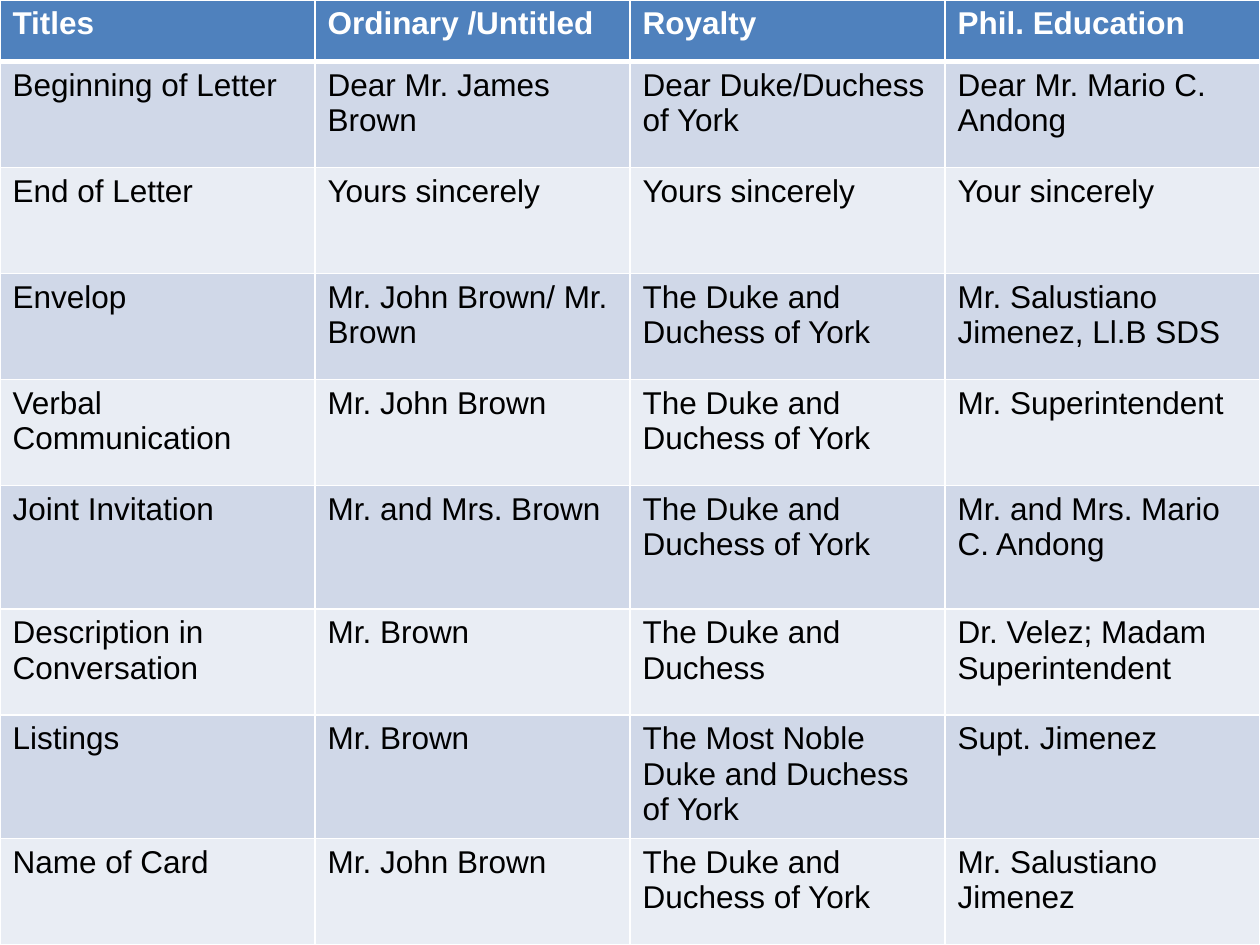
import pptx
import pptx.dml.color
import pptx.oxml
import pptx.oxml.ns
import pptx.util

Pt = pptx.util.Pt
RGBColor = pptx.dml.color.RGBColor

WHITE = RGBColor(0xFF, 0xFF, 0xFF)
BLACK = RGBColor(0x00, 0x00, 0x00)
HEADER = RGBColor(0x4F, 0x81, 0xBD)
BANDS = [RGBColor(0xE9, 0xED, 0xF4), RGBColor(0xD0, 0xD8, 0xE8)]

ROWS = [
    ("Titles", "Ordinary /Untitled", "Royalty", "Phil. Education"),
    ("Beginning of Letter", "Dear Mr. James Brown", "Dear Duke/Duchess of York", "Dear Mr. Mario C. Andong"),
    ("End of Letter", "Yours sincerely", "Yours sincerely", "Your sincerely"),
    ("Envelop", "Mr. John Brown/ Mr. Brown", "The Duke and Duchess of York", "Mr. Salustiano Jimenez, Ll.B SDS"),
    ("Verbal Communication", "Mr. John Brown", "The Duke and Duchess of York", "Mr. Superintendent"),
    ("Joint Invitation", "Mr. and Mrs. Brown", "The Duke and Duchess of York", "Mr. and Mrs. Mario C. Andong"),
    ("Description in Conversation", "Mr. Brown", "The Duke and Duchess", "Dr. Velez; Madam Superintendent"),
    ("Listings", "Mr. Brown", "The Most Noble Duke and Duchess of York", "Supt. Jimenez"),
    ("Name of Card", "Mr. John Brown", "The Duke and Duchess of York", "Mr. Salustiano Jimenez"),
]
HEIGHTS = [35.2, 60.6, 60.6, 60.6, 60.6, 70.6, 60.6, 70.6, 60.6]


def add_border(cell, side, width):
    ln = pptx.oxml.parse_xml(
        f'<a:{side} {pptx.oxml.ns.nsdecls("a")} w="{Pt(width)}"><a:solidFill>'
        f'<a:srgbClr val="{WHITE}"/></a:solidFill></a:{side}>'
    )
    cell._tc.get_or_add_tcPr().append(ln)


prs = pptx.Presentation()
prs.slide_width, prs.slide_height = Pt(720), Pt(540)
s = prs.slides.add_slide(prs.slide_layouts[6])
table = s.shapes.add_table(len(ROWS), 4, Pt(0), Pt(0), Pt(720), Pt(540)).table

for column in table.columns:
    column.width = Pt(180)

for i, (texts, height) in enumerate(zip(ROWS, HEIGHTS)):
    table.rows[i].height = Pt(height)
    for j, text in enumerate(texts):
        cell = table.cell(i, j)
        add_border(cell, "lnL", 1)
        add_border(cell, "lnR", 1)
        add_border(cell, "lnT", 3 if i == 1 else 1)
        add_border(cell, "lnB", 3 if i == 0 else 1)
        cell.fill.solid()
        cell.fill.fore_color.rgb = HEADER if i == 0 else BANDS[i % 2]
        r = cell.text_frame.paragraphs[0].add_run()
        r.text = text
        r.font.name = "Arial"
        r.font.size = Pt(18)
        r.font.bold = i == 0
        r.font.color.rgb = WHITE if i == 0 else BLACK

prs.save("out.pptx")
